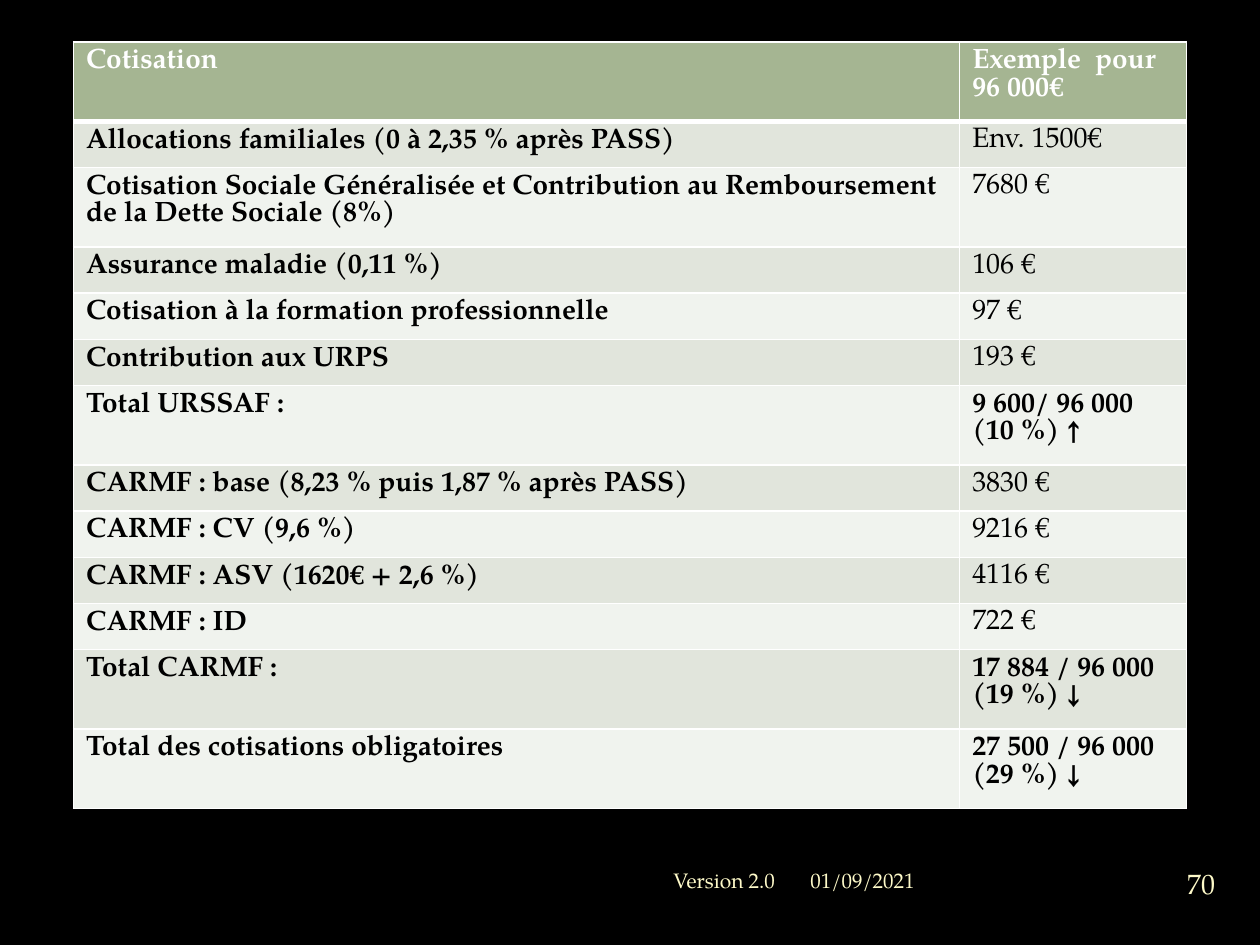
from lxml.etree import SubElement as Sub
from pptx import Presentation
from pptx.dml.color import RGBColor as Rgb
from pptx.enum.text import MSO_ANCHOR as Anchor, PP_ALIGN as Align
from pptx.oxml.ns import qn
from pptx.util import Pt

BLACK = Rgb(0, 0, 0)
WHITE = Rgb(255, 255, 255)
GREEN = Rgb(0xA5, 0xB5, 0x92)
BANDS = (Rgb(0xF0, 0xF3, 0xEE), Rgb(0xE1, 0xE5, 0xDC))
CREAM = Rgb(0xFE, 0xFA, 0xC9)
FONT = "TeX Gyre Pagella"
SHORT, TALL = 26.4, 45.4

# Label, amount, row height
ROWS = [
    ("Cotisation", "Exemple  pour 96 000€", TALL),
    ("Allocations familiales (0 à 2,35 % après PASS)", "Env. 1500€", SHORT),
    ("Cotisation Sociale Généralisée et Contribution au Remboursement "
     "de la Dette Sociale (8%)", "7680 €", TALL),
    ("Assurance maladie (0,11 %)", "106 €", SHORT),
    ("Cotisation à la formation professionnelle", "97 €", SHORT),
    ("Contribution aux URPS", "193 €", SHORT),
    ("Total URSSAF :", "9 600/ 96 000 (10 %) ↑", TALL),
    ("CARMF : base (8,23 % puis 1,87 % après PASS)", "3830 €", SHORT),
    ("CARMF : CV (9,6 %)", "9216 €", SHORT),
    ("CARMF : ASV (1620€ + 2,6 %)", "4116 €", SHORT),
    ("CARMF : ID", "722 €", SHORT),
    ("Total CARMF :", "17 884 / 96 000\n(19 %) ↓", TALL),
    ("Total des cotisations obligatoires", "27 500 / 96 000\n(29 %) ↓", TALL),
]


def style(para, size, color, bold=False):
    font = para.font
    font.name, font.size, font.bold = FONT, Pt(size), bold
    font.color.rgb = color


def border(cell, row):
    """White cell edges, thicker under the header."""
    props = cell._tc.get_or_add_tcPr()
    wide = {"lnT": 3 if row == 1 else 1, "lnB": 3 if row == 0 else 1}
    for pos, tag in enumerate(("lnL", "lnR", "lnT", "lnB")):
        line = Sub(props, qn(f"a:{tag}"), w=str(Pt(wide.get(tag, 1))))
        fill = Sub(line, qn("a:solidFill"))
        Sub(fill, qn("a:srgbClr"), val=str(WHITE))
        props.insert(pos, line)


def fill_cell(cell, text, row, bold):
    cell.text = text
    cell.fill.solid()
    cell.fill.fore_color.rgb = BANDS[row % 2] if row else GREEN
    border(cell, row)
    for para in cell.text_frame.paragraphs:
        para.line_spacing = Pt(15.7)
        style(para, 16, BLACK if row else WHITE, bold)


def add_grid(slide, left, top, width, height):
    """Table of contributions."""
    table = slide.shapes.add_table(
        len(ROWS), 2, Pt(left), Pt(top), Pt(width), Pt(height)).table
    table.columns[0].width = Pt(width - 129.6)
    table.columns[1].width = Pt(129.6)
    for row, (label, value, high) in enumerate(ROWS):
        table.rows[row].height = Pt(high)
        total = row == 0 or label.startswith("Total")
        fill_cell(table.cell(row, 0), label, row, True)
        fill_cell(table.cell(row, 1), value, row, total)


def add_label(slide, text, box, size, align, inset=True):
    shape = slide.shapes.add_textbox(*map(Pt, box))
    frame = shape.text_frame
    frame.word_wrap = True
    frame.vertical_anchor = Anchor.MIDDLE
    if not inset:
        frame.margin_left = frame.margin_right = 0
        frame.margin_top = frame.margin_bottom = 0
    para = frame.paragraphs[0]
    para.text, para.alignment = text, align
    style(para, size, CREAM)


def add_footer(slide, left, top, width, height):
    """Version, date and page number."""
    add_label(slide, "Version 2.0", (left, top, 282, height), 12, Align.RIGHT)
    add_label(slide, "01/09/2021", (left + 288, top, 204, height), 12, Align.LEFT)
    add_label(slide, "70", (left + width - 48, top - 1.2, 48, 36), 16,
              Align.CENTER, inset=False)


def main():
    deck = Presentation()
    deck.slide_width, deck.slide_height = Pt(720), Pt(540)
    slide = deck.slides.add_slide(deck.slide_layouts[6])
    back = slide.background.fill
    back.solid()
    back.fore_color.rgb = BLACK
    add_grid(slide, 42, 24, 636, sum(row[2] for row in ROWS))
    add_footer(slide, 168, 488, 542.4, 30)
    deck.save("out.pptx")


if __name__ == "__main__":
    main()
